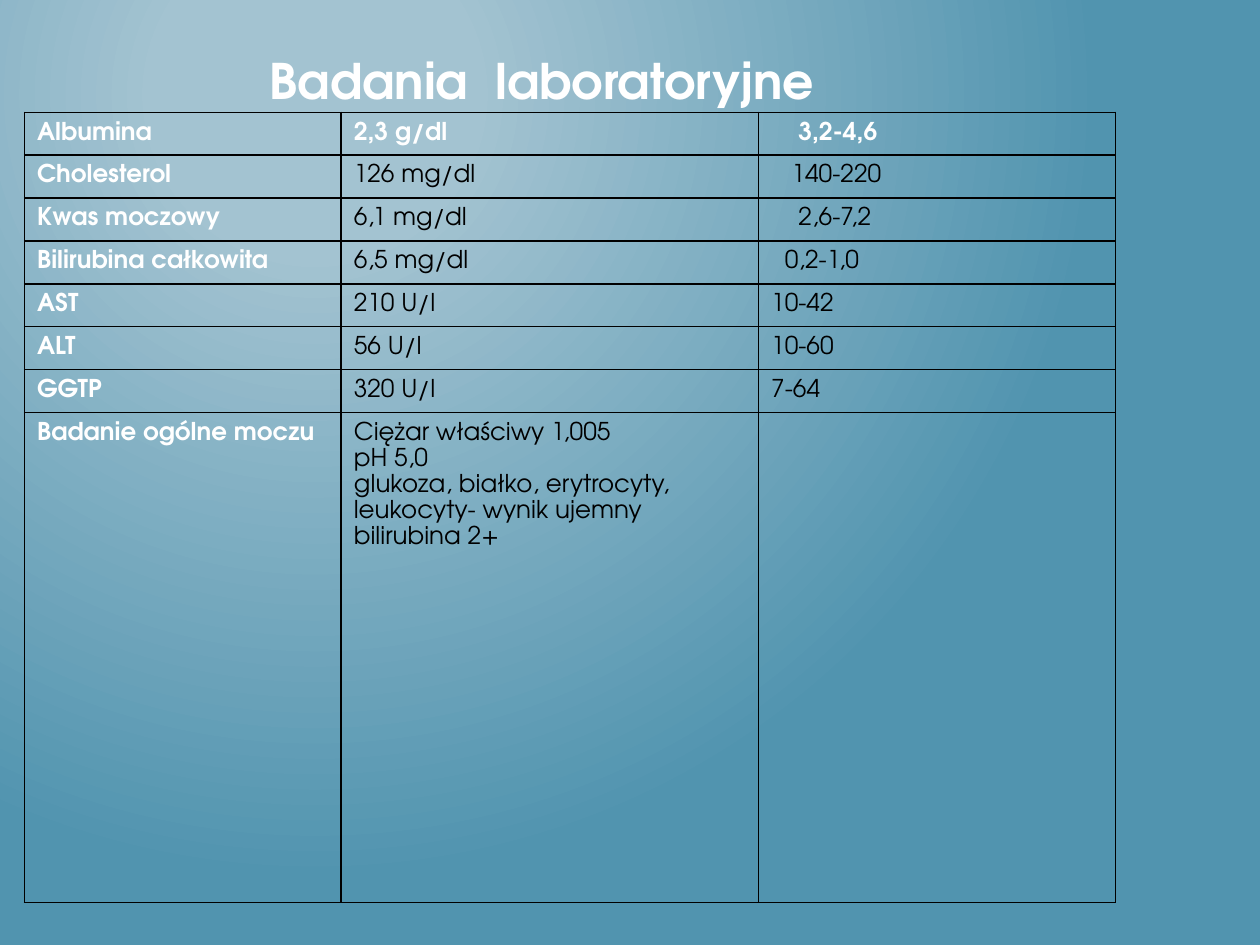
from dataclasses import dataclass

from lxml.etree import SubElement, fromstring
from pptx import Presentation
from pptx.dml.color import RGBColor as RGB
from pptx.enum.text import MSO_ANCHOR as Anchor
from pptx.oxml.ns import qn
from pptx.util import Pt

COLORS = {"light": "A3C3D1", "deep": "5194AF", "white": "FFFFFF", "black": "000000"}
FONT = "TeX Gyre Adventor"
A_NS = "http://schemas.openxmlformats.org/drawingml/2006/main"
COL_WIDTHS = (181, 238.5, 204)
ROW_HEIGHT = 24.5
LAST_ROW_HEIGHT = 280
SPACE_WIDTH = 3.88


@dataclass(frozen=True)
class LabTest:
    name: str
    results: tuple[str, ...]
    norm: str = ""
    norm_spaces: int = 0
    bold: bool = False


TESTS = (
    LabTest("Albumina", ("2,3 g/dl",), "3,2-4,6", 4, True),
    LabTest("Cholesterol", ("126 mg/dl",), "140-220", 3),
    LabTest("Kwas moczowy", ("6,1 mg/dl",), "2,6-7,2", 4),
    LabTest("Bilirubina całkowita", ("6,5 mg/dl",), "0,2-1,0", 2),
    LabTest("AST", ("210 U/I",), "10-42"),
    LabTest("ALT", ("56 U/I",), "10-60"),
    LabTest("GGTP", ("320 U/I",), "7-64"),
    LabTest("Badanie ogólne moczu", (
        "Ciężar właściwy 1,005",
        "pH 5,0",
        "glukoza, białko, erytrocyty, leukocyty- wynik ujemny",
        "bilirubina 2+",
    )),
)


def paint_background(s) -> None:
    fill = s.background.fill
    fill.gradient()
    for stop, position, color in zip(fill.gradient_stops, (0.2, 1), ("light", "deep")):
        stop.position = position
        stop.color.rgb = RGB.from_string(COLORS[color])
    grad = next(s.element.iter(qn("a:gradFill")))
    grad.replace(grad.find(qn("a:lin")), fromstring(
        f'<a:path xmlns:a="{A_NS}" path="circle">'
        '<a:fillToRect l="50000" t="20000" r="100000" b="100000"/></a:path>'))


def add_run(p, text: str, size: float, color: str, bold: bool) -> None:
    r = p.add_run()
    r.text = text
    r.font.name = FONT
    r.font.size = Pt(size)
    r.font.bold = bold
    r.font.color.rgb = RGB.from_string(COLORS[color])


def add_title(s, text: str) -> None:
    tf = s.shapes.add_textbox(Pt(65.5), Pt(0), Pt(620.5), Pt(66.2)).text_frame
    tf.word_wrap = True
    tf.vertical_anchor = Anchor.BOTTOM
    tf.margin_left = Pt(88.5)
    add_run(tf.paragraphs[0], text, 28, "white", True)


def add_borders(cell) -> None:
    tc_pr = cell._tc.get_or_add_tcPr()
    for side in ("lnL", "lnR", "lnT", "lnB"):
        ln = SubElement(tc_pr, qn(f"a:{side}"), w=str(Pt(1)))
        SubElement(SubElement(ln, qn("a:solidFill")), qn("a:srgbClr"), val=COLORS["black"])


def fill_cell(cell, lines: tuple[str, ...], bold: bool, indent: float = 0) -> None:
    add_borders(cell)
    cell.fill.background()
    tf = cell.text_frame
    for i, line in enumerate(lines):
        p = tf.add_paragraph() if i else tf.paragraphs[0]
        p.line_spacing = 1.15
        if indent:
            p._p.get_or_add_pPr().set("marL", str(Pt(indent)))
        add_run(p, line, 14, "white" if bold else "black", bold)


def add_results(s, tests: tuple[LabTest, ...]) -> None:
    heights = [ROW_HEIGHT] * (len(tests) - 1) + [LAST_ROW_HEIGHT]
    table = s.shapes.add_table(len(tests), len(COL_WIDTHS), Pt(14), Pt(64.2),
                               Pt(sum(COL_WIDTHS)), Pt(sum(heights))).table
    table.first_row = table.horz_banding = False
    for column, width in zip(table.columns, COL_WIDTHS):
        column.width = Pt(width)
    for row, height, test in zip(table.rows, heights, tests):
        row.height = Pt(height)
        name, result, norm = row.cells
        fill_cell(name, (test.name,), True)
        fill_cell(result, test.results, test.bold)
        fill_cell(norm, (test.norm,) if test.norm else (), test.bold,
                  test.norm_spaces * SPACE_WIDTH)


def main() -> None:
    prs = Presentation()
    prs.slide_width, prs.slide_height = Pt(720), Pt(540)
    s = prs.slides.add_slide(prs.slide_layouts[6])
    paint_background(s)
    add_results(s, TESTS)
    add_title(s, "Badania  laboratoryjne")
    prs.save("out.pptx")


if __name__ == "__main__":
    main()
